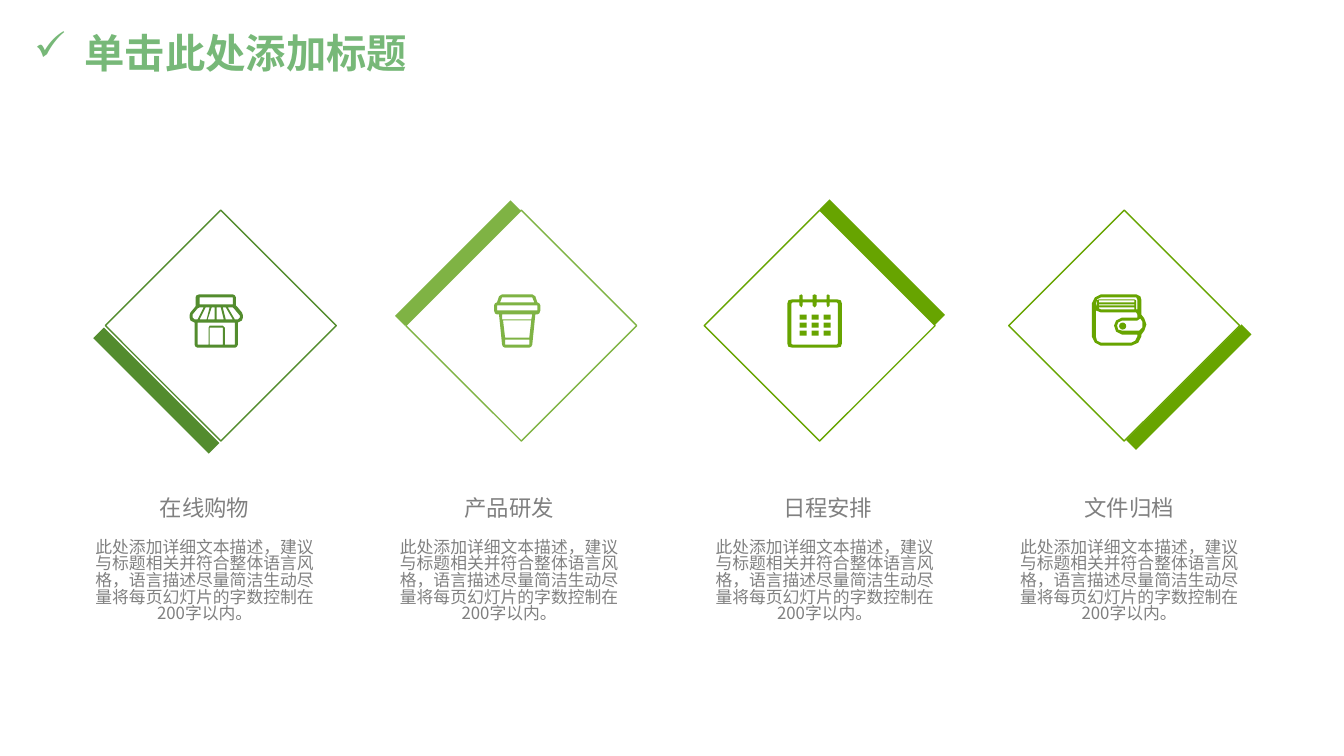
from lxml import etree
from pptx import Presentation
from pptx.dml.color import RGBColor
from pptx.enum.shapes import MSO_SHAPE
from pptx.enum.text import MSO_ANCHOR, PP_ALIGN
from pptx.oxml.ns import qn
from pptx.util import Pt

PX = 9144  # EMU per px, 100 px to the inch
THEME = {
    "title": "77B878", "text": "808080", "panel": "FFFFFF",
    "forest": "538C2E", "leaf": "7FB344", "lime": "67A400",
    "font": "Noto Sans CJK SC", "title_font": "Montserrat",
    "title_size": 28.8, "head_size": 16, "body_size": 12,
}
BODY = ("此处添加详细文本描述，建议与标题相关并符合整体语言风格，"
        "语言描述尽量简洁生动尽量将每页幻灯片的字数控制在200字以内。")

# Icon outlines: the silhouette first, then its openings, from the icon's corner
STORE = [
    [(52, 18), (47, 12), (46, 11), (46, 3), (45, 1), (43, 0), (10, 0), (7, 1), (6, 3),
     (6, 12), (1, 18), (0, 21), (0, 23), (1, 26), (5, 28), (5, 50), (6, 52), (8, 53),
     (45, 53), (47, 52), (48, 50), (48, 28), (52, 26), (53, 23), (53, 21)],
    [(10, 3), (43, 3), (43, 10), (10, 10)],
    [(50, 23), (48, 25), (45, 25), (38, 13), (43, 13), (44, 14), (49, 20), (50, 21)],
    [(3, 23), (3, 20), (8, 14), (10, 13), (14, 13), (8, 25), (5, 25)],
    [(33, 13), (36, 13), (43, 25), (36, 25)],
    [(27, 13), (31, 13), (34, 25), (27, 25)],
    [(22, 13), (25, 13), (25, 25), (18, 25)],
    [(16, 13), (20, 13), (17, 25), (10, 25)],
    [(45, 50), (35, 50), (35, 33), (33, 31), (20, 31), (19, 33), (19, 50), (8, 50),
     (8, 28), (45, 28)],
    [(33, 50), (20, 50), (20, 33), (33, 33)],
]
CUP = [
    [(43, 8), (41, 2), (38, 0), (8, 0), (5, 2), (3, 8), (1, 9), (0, 11), (0, 16), (1, 19),
     (3, 20), (5, 20), (8, 50), (9, 52), (11, 53), (35, 53), (37, 52), (38, 50), (41, 20),
     (43, 20), (45, 19), (46, 16), (46, 11), (45, 9)],
    [(8, 3), (38, 3), (40, 8), (6, 8)],
    [(3, 11), (43, 11), (43, 16), (3, 16)],
    [(8, 20), (38, 20), (37, 25), (8, 25)],
    [(9, 26), (37, 26), (35, 43), (11, 43)],
    [(11, 45), (35, 45), (35, 50), (11, 50)],
]
CALENDAR = [
    [(49, 5), (42, 5), (42, 1), (40, 0), (39, 1), (39, 5), (29, 5), (29, 1), (27, 0),
     (25, 1), (25, 5), (15, 5), (15, 1), (14, 0), (12, 1), (12, 5), (5, 5), (1, 6), (0, 9),
     (0, 49), (1, 52), (5, 53), (49, 53), (53, 52), (54, 49), (54, 9), (53, 6)],
    [(49, 50), (5, 50), (4, 49), (4, 9), (5, 8), (12, 8), (12, 11), (14, 13), (15, 11),
     (15, 8), (25, 8), (25, 11), (27, 13), (29, 11), (29, 8), (39, 8), (39, 11), (40, 13),
     (42, 11), (42, 8), (49, 8), (50, 9), (50, 49)],
]
WALLET = [
    [(49, 20), (49, 5), (48, 2), (44, 0), (9, 0), (3, 3), (0, 9), (0, 42), (3, 48), (9, 51),
     (39, 51), (46, 48), (49, 42), (49, 40), (52, 36), (54, 30), (52, 24)],
    [(47, 36), (30, 36), (26, 35), (25, 31), (26, 28), (30, 26), (45, 26), (48, 24),
     (50, 27), (50, 33)],
    [(45, 42), (43, 46), (39, 48), (9, 48), (5, 46), (4, 42), (4, 16), (9, 18), (44, 18),
     (45, 20), (45, 23), (30, 23), (24, 26), (22, 31), (24, 37), (30, 40), (45, 40)],
    [(42, 13), (42, 15), (9, 15), (7, 14), (7, 13)],
    [(42, 10), (42, 11), (7, 11), (7, 10)],
    [(42, 6), (42, 8), (7, 8), (7, 6)],
    [(9, 3), (44, 3), (45, 5), (45, 15), (44, 15), (44, 6), (42, 5), (7, 5), (5, 6),
     (5, 13), (4, 9), (5, 5)],
]
DOT, CELL = MSO_SHAPE.OVAL, MSO_SHAPE.RECTANGLE

# Heading, colour, heading left, body left, diamond left, bar box and turn,
# icon left and outline, icon details (shape, left, top, width, height)
COLUMNS = [
    ("在线购物", "forest", 148, 83, 138, (74, 380, 162, 15), 45, 188, STORE, []),
    ("产品研发", "leaf", 450, 385, 436, (447, 180, 14, 162), 45, 490, CUP, []),
    ("日程安排", "lime", 766, 698, 732, (868, 179, 14, 162), 135, 781, CALENDAR,
     [(CELL, 12 + 12 * col, 20 + 8 * row, 7, 5) for row in range(3) for col in range(3)]),
    ("文件归档", "lime", 1065, 1000, 1034, (1172, 303, 14, 162), 225, 1083, WALLET,
     [(DOT, 27, 28, 7, 7)]),
]
ICON_TOP = 292

prs = Presentation()
prs.slide_width, prs.slide_height = 1333 * PX, 750 * PX
s = prs.slides.add_slide(prs.slide_layouts[6])


def add_text(box, text, size, color, font=THEME["font"], wrap=True, spacing=0.82):
    sp = s.shapes.add_textbox(*[v * PX for v in box])
    tf = sp.text_frame
    tf.word_wrap = wrap
    p = tf.paragraphs[0]
    p.text = text
    p.alignment = PP_ALIGN.CENTER
    p.line_spacing = spacing
    r = p.runs[0]
    r.font.name, r.font.size = font, Pt(size)
    r.font.color.rgb = RGBColor.from_string(color)
    etree.SubElement(r.font._element, qn("a:ea"), typeface=THEME["font"])
    return tf


def paint(sp, fill, line=None):
    sp.shadow.inherit = False
    sp.fill.solid()
    sp.fill.fore_color.rgb = RGBColor.from_string(fill)
    if line:
        sp.line.color.rgb = RGBColor.from_string(line)
        sp.line.width = Pt(1)
    else:
        sp.line.fill.background()


for head, tone, head_x, body_x, diamond_x, bar, turn, icon_x, outline, details in COLUMNS:
    color = THEME[tone]

    # Texts
    add_text((body_x, 531, 240, 114), BODY, THEME["body_size"], THEME["text"])
    add_text((head_x, 490, 110, 37), head, THEME["head_size"], THEME["text"], wrap=False)

    # Diamond and its thick edge
    sp = s.shapes.add_shape(CELL, diamond_x * PX, 242 * PX, 162 * PX, 162 * PX)
    sp.rotation = 45
    paint(sp, THEME["panel"], color)
    sp = s.shapes.add_shape(CELL, *[v * PX for v in bar])
    sp.rotation = turn
    paint(sp, color)

    # Icon
    contours = [[(icon_x + x, ICON_TOP + y) for x, y in points] for points in outline]
    builder = s.shapes.build_freeform(*contours[0][0], scale=PX)
    for points in contours:
        builder.move_to(*points[0])
        builder.add_line_segments(points[1:], close=True)
    paint(builder.convert_to_shape(), color)
    for kind, x, y, w, h in details:
        sp = s.shapes.add_shape(kind, (icon_x + x) * PX, (ICON_TOP + y) * PX, w * PX, h * PX)
        paint(sp, color)

# Title with a check mark bullet
tf = add_text((24, 29, 1150, 51), "单击此处添加标题", THEME["title_size"], THEME["title"],
              THEME["title_font"], spacing=0.9)
tf.vertical_anchor = MSO_ANCHOR.MIDDLE
p = tf.paragraphs[0]
p.alignment = PP_ALIGN.LEFT
p.runs[0].font.bold = True
pPr = p._p.get_or_add_pPr()
pPr.set("marL", str(50 * PX))
pPr.set("indent", str(-50 * PX))
etree.SubElement(pPr, qn("a:buChar"), char="✓")

prs.save("out.pptx")
